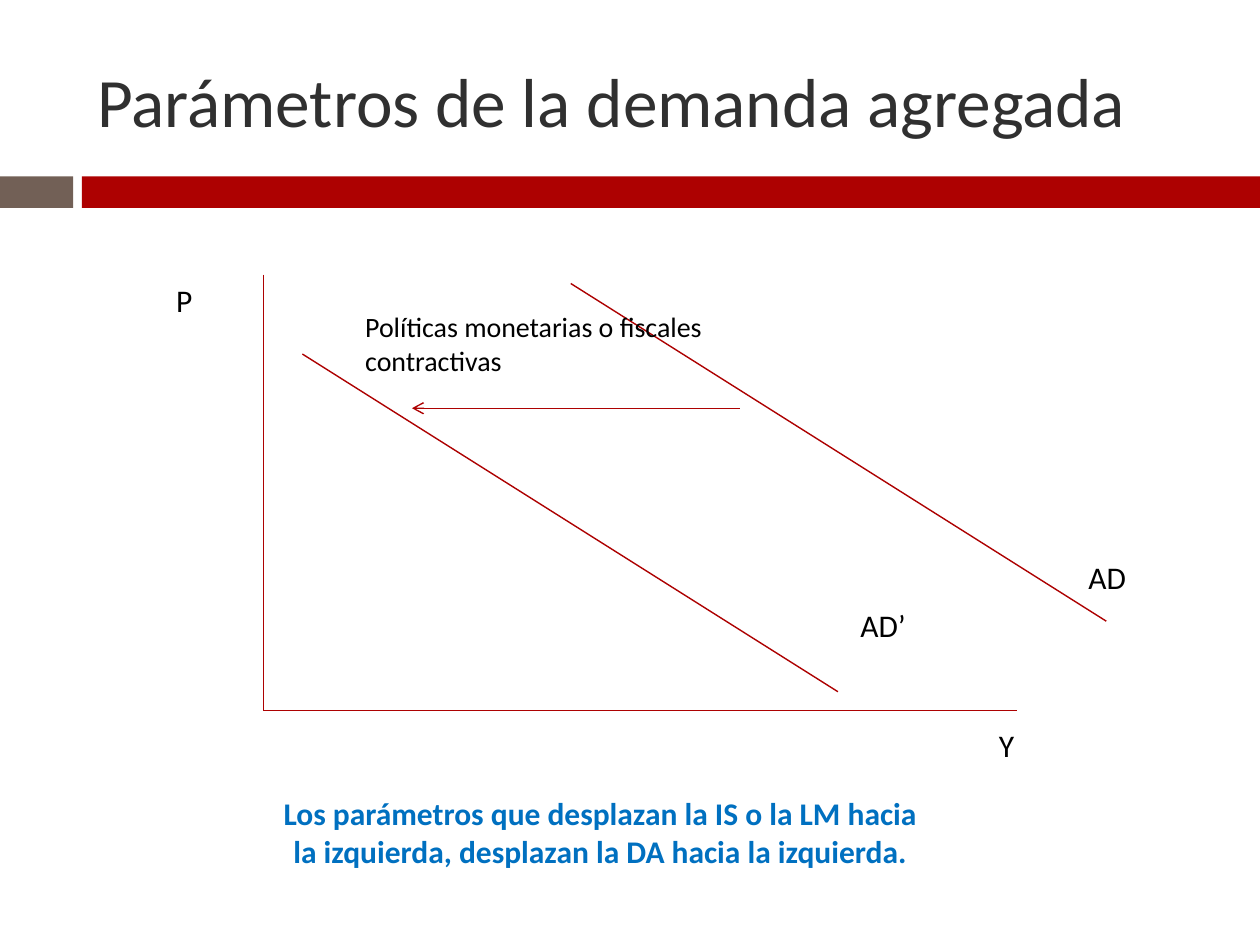
from lxml import etree
from pptx import Presentation
from pptx.dml.color import RGBColor
from pptx.enum.shapes import MSO_CONNECTOR, MSO_SHAPE
from pptx.enum.text import MSO_ANCHOR, PP_ALIGN
from pptx.oxml.ns import qn
from pptx.util import Inches, Pt

FONT = "Calibri"
RED, BROWN, GREY, BLUE, BLACK = "AD0101", "726056", "303030", "0070C0", "000000"


def color(hex_string):
    return RGBColor.from_string(hex_string)


def format_text(frame, text, size, hex_string, bold=False, align=PP_ALIGN.LEFT):
    frame.text = text
    frame.word_wrap = True
    para = frame.paragraphs[0]
    para.alignment = align
    font = para.runs[0].font
    font.name, font.size, font.bold = FONT, Pt(size), bold
    font.color.rgb = color(hex_string)


def add_label(page, box, text, size=18, hex_string=BLACK, **style):
    label = page.shapes.add_textbox(*map(Inches, box))
    format_text(label.text_frame, text, size, hex_string, **style)
    return label


def add_line(page, start, end, arrow=False):
    line = page.shapes.add_connector(
        MSO_CONNECTOR.STRAIGHT, *map(Inches, (*start, *end)))
    line.line.color.rgb = color(RED)
    line.line.width = Pt(0.79)
    if arrow:
        outline = line.line._get_or_add_ln()
        etree.SubElement(outline, qn("a:tailEnd"), type="arrow")
    etree.SubElement(line._element.spPr, qn("a:effectLst"))


def add_band(page, left, top, width, height):
    """Short brown block and long red bar, with a small gap between."""
    block, gap = 0.58, 0.07
    bar_left = left + block + gap
    for x, w, fill in ((left, block, BROWN),
                       (bar_left, left + width - bar_left, RED)):
        bar = page.shapes.add_shape(
            MSO_SHAPE.RECTANGLE, *map(Inches, (x, top, w, height)))
        bar.shadow.inherit = False
        bar.fill.solid()
        bar.fill.fore_color.rgb = color(fill)
        bar.line.fill.background()


def add_title(page, left, top, width, height):
    title = page.shapes.title
    title.left, title.top, title.width, title.height = map(
        Inches, (left, top, width, height))
    format_text(title.text_frame, "Parámetros de la demanda agregada", 39.6, GREY)
    title.text_frame.vertical_anchor = MSO_ANCHOR.MIDDLE


def add_diagram(page, left, top, width, height):
    """Price-output axes with the demand curve shifting to the left."""
    bottom = top + height

    # Axes
    add_line(page, (left, top), (left, bottom))
    add_line(page, (left, bottom), (left + width, bottom))

    # Parallel demand curves: AD' and AD
    for dx, dy in ((0.31, 0.63), (2.44, 0.07)):
        x, y = left + dx, top + dy
        add_line(page, (x, y), (x + 4.25, y + 2.68))

    # Shift arrow
    arrow_y = top + 1.06
    add_line(page, (left + 3.78, arrow_y), (left + 1.18, arrow_y), arrow=True)

    # Labels
    for text, dx, dy, label_width in (("P", -0.79, 0, 0.63),
                                      ("Y", 5.74, 3.53, 0.47),
                                      ("AD’", 4.64, 2.58, 1.26),
                                      ("AD", 6.45, 2.2, 1.26)):
        add_label(page, (left + dx, top + dy, label_width, 0.4), text)
    add_label(page, (left + 0.71, top + 0.23, 2.91, 0.64),
              "Políticas monetarias o fiscales contractivas", size=16)


def add_conclusion(page, left, top, width, height):
    note = add_label(
        page, (left, top, width, height),
        "Los parámetros que desplazan la IS o la LM hacia la izquierda, "
        "desplazan la DA hacia la izquierda.",
        hex_string=BLUE, bold=True, align=PP_ALIGN.CENTER)
    note.text_frame.margin_top = Inches(0.35)


def main():
    deck = Presentation()
    deck.slide_width, deck.slide_height = Inches(10), Inches(7.5)
    page = deck.slides.add_slide(deck.slide_layouts[5])
    add_band(page, 0, 1.4, 10, 0.25)
    add_title(page, 0.67, 0.25, 8.92, 1.08)
    add_diagram(page, 2.09, 2.18, 5.98, 3.46)
    add_conclusion(page, 2.09, 5.95, 5.35, 1.5)
    deck.save("out.pptx")


if __name__ == "__main__":
    main()
